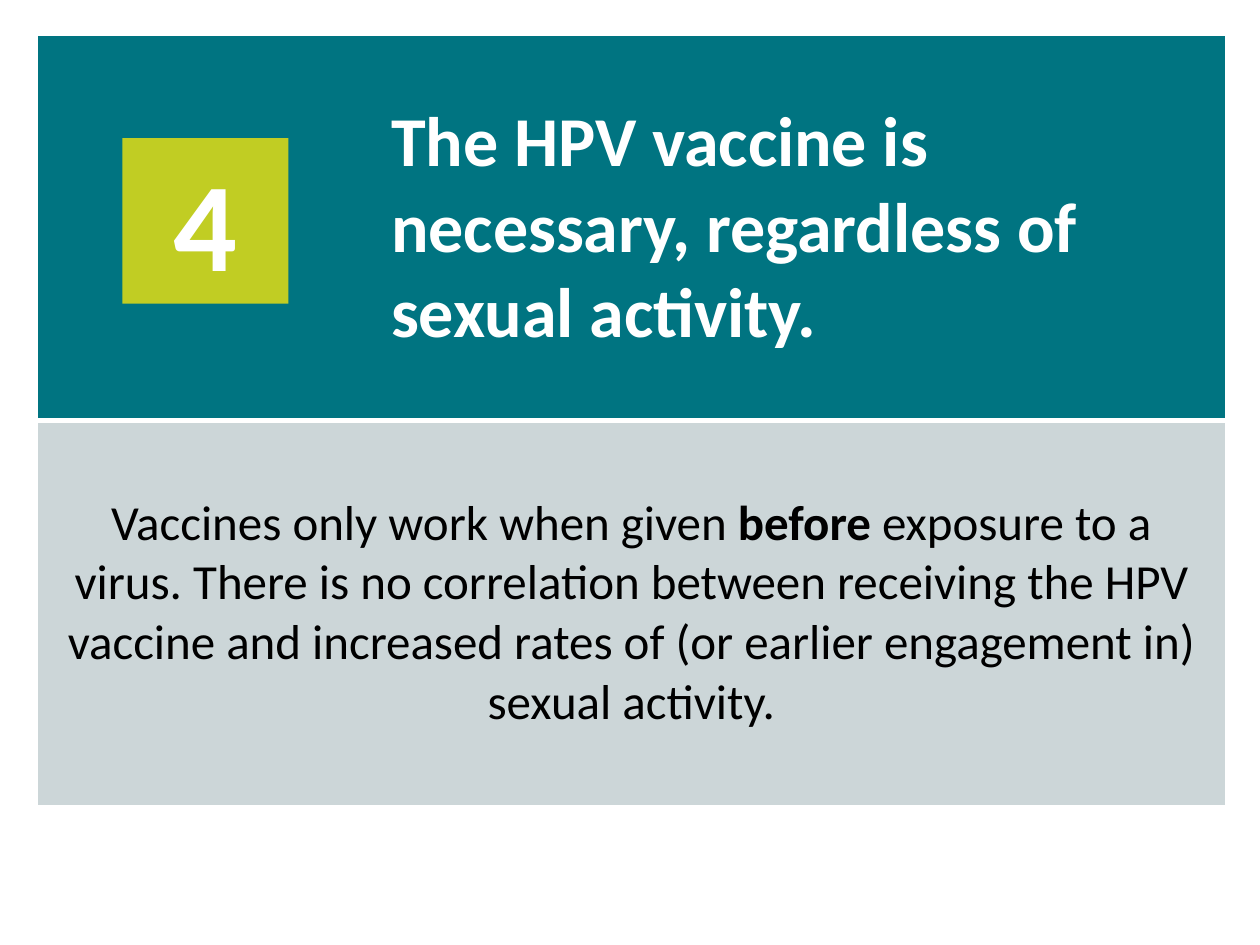
from lxml import etree
from pptx import Presentation
from pptx.dml.color import RGBColor
from pptx.enum.shapes import MSO_SHAPE
from pptx.enum.text import MSO_ANCHOR, PP_ALIGN
from pptx.oxml.ns import qn
from pptx.util import Pt

RECTANGLE = MSO_SHAPE.RECTANGLE
MIDDLE = MSO_ANCHOR.MIDDLE
LEFT, CENTER = PP_ALIGN.LEFT, PP_ALIGN.CENTER

TEAL, GREY, LIME = "007481", "CCD6D8", "C1CD23"
WHITE, BLACK = "FFFFFF", "000000"


def color(hex_code):
    return RGBColor.from_string(hex_code)


def write(frame, *runs, size, ink, align=LEFT):
    """Fill the first paragraph with (text, bold) runs."""
    frame.word_wrap = True
    paragraph = frame.paragraphs[0]
    paragraph.alignment = align
    for text, bold in runs:
        run = paragraph.add_run()
        run.text = text
        run.font.name = FactSlide.font
        run.font.size = Pt(size)
        run.font.bold = bold
        run.font.color.rgb = color(ink)


def set_borders(cell, **widths):
    """Draw white borders for the sides L, R, T, B; a side left out has no line."""
    properties = cell._tc.get_or_add_tcPr()
    for side in "LRTB":
        line = etree.SubElement(properties, qn(f"a:ln{side}"))
        if side in widths:
            line.set("w", str(Pt(widths[side])))
            fill = etree.SubElement(line, qn("a:solidFill"))
            etree.SubElement(fill, qn("a:srgbClr")).set("val", WHITE)
        else:
            etree.SubElement(line, qn("a:noFill"))


class FactSlide:
    font = "Calibri"
    cell_margin = 10.8

    def __init__(self, presentation):
        self.slide = presentation.slides.add_slide(presentation.slide_layouts[6])

    def table(self, left, top, column_widths, row_heights):
        table = self.slide.shapes.add_table(
            len(row_heights), len(column_widths), Pt(left), Pt(top),
            Pt(sum(column_widths)), Pt(sum(row_heights))).table
        for column, width in zip(table.columns, column_widths):
            column.width = Pt(width)
        for row, height in zip(table.rows, row_heights):
            row.height = Pt(height)
        return table

    def cell(self, cell, fill, **borders):
        set_borders(cell, **borders)
        cell.fill.solid()
        cell.fill.fore_color.rgb = color(fill)
        cell.vertical_anchor = MIDDLE
        cell.margin_left = cell.margin_right = Pt(self.cell_margin)
        cell.margin_top = cell.margin_bottom = Pt(self.cell_margin)
        return cell.text_frame

    def badge(self, left, top, width, height, fill):
        badge = self.slide.shapes.add_shape(
            RECTANGLE, Pt(left), Pt(top), Pt(width), Pt(height))
        badge.shadow.inherit = False
        badge.fill.solid()
        badge.fill.fore_color.rgb = color(fill)
        badge.line.fill.background()
        badge.text_frame.vertical_anchor = MIDDLE
        return badge.text_frame


def main():
    presentation = Presentation()
    presentation.slide_width, presentation.slide_height = Pt(720), Pt(540)
    fact = FactSlide(presentation)

    table = fact.table(21.2, 20.4, [191.5, 487.5], [220, 220])
    table.cell(1, 0).merge(table.cell(1, 1))

    fact.cell(table.cell(0, 0), TEAL, L=1, T=1, B=3)
    claim = fact.cell(table.cell(0, 1), TEAL, R=1, T=1, B=3)
    explanation = fact.cell(table.cell(1, 0), GREY, L=1, R=1, T=3, B=1)
    fact.cell(table.cell(1, 1), GREY, R=1, T=3, B=1)

    write(claim,
          ("The HPV vaccine is necessary, regardless of sexual activity.", True),
          size=40, ink=WHITE)
    write(explanation,
          ("Vaccines only work when given ", False),
          ("before", True),
          (" exposure to a virus. There is no correlation between receiving "
           "the HPV vaccine and increased rates of (or earlier engagement in) "
           "sexual activity.", False),
          size=28, ink=BLACK, align=CENTER)

    number = fact.badge(70, 79, 94.8, 94.5, LIME)
    write(number, ("4", True), size=72, ink=WHITE, align=CENTER)

    presentation.save("out.pptx")


if __name__ == "__main__":
    main()
